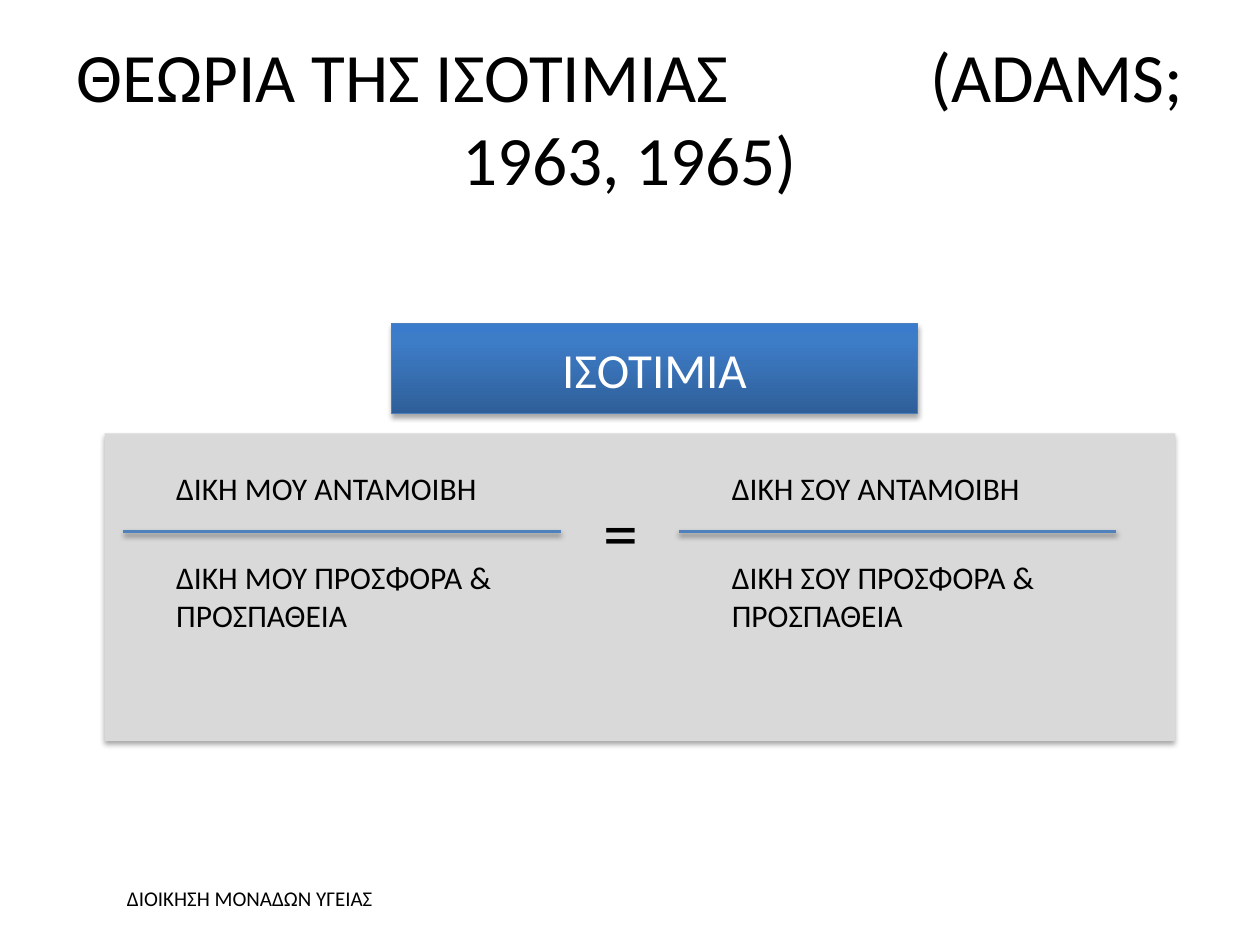
from copy import deepcopy

from pptx import Presentation
from pptx.dml.color import RGBColor
from pptx.enum.shapes import MSO_CONNECTOR, MSO_SHAPE
from pptx.enum.text import MSO_ANCHOR, PP_ALIGN
from pptx.oxml import parse_xml
from pptx.oxml.ns import nsdecls, qn
from pptx.util import Inches, Pt

LEFT, CENTER = PP_ALIGN.LEFT, PP_ALIGN.CENTER
TOP, MIDDLE = MSO_ANCHOR.TOP, MSO_ANCHOR.MIDDLE
RECTANGLE, STRAIGHT = MSO_SHAPE.RECTANGLE, MSO_CONNECTOR.STRAIGHT

# Content
TITLE = ["ΘΕΩΡΙΑ ΤΗΣ ΙΣΟΤΙΜΙΑΣ", " ", "(ADAMS; 1963, 1965)"]
BANNER = "ΙΣΟΤΙΜΙΑ"
FRACTIONS = [
    ("ΔΙΚΗ ΜΟΥ ΑΝΤΑΜΟΙΒΗ", "ΔΙΚΗ ΜΟΥ ΠΡΟΣΦΟΡΑ & ΠΡΟΣΠΑΘΕΙΑ"),
    ("ΔΙΚΗ ΣΟΥ ΑΝΤΑΜΟΙΒΗ", "ΔΙΚΗ ΣΟΥ ΠΡΟΣΦΟΡΑ & ΠΡΟΣΠΑΘΕΙΑ"),
]
FOOTER = "ΔΙΟΙΚΗΣΗ ΜΟΝΑΔΩΝ ΥΓΕΙΑΣ"

# Style
FONT, BLACK, WHITE = "Calibri", "000000", "FFFFFF"
PANEL_GREY, BAR_BLUE, BANNER_EDGE = "D9D9D9", "4F81BD", "4B7EBC"
BANNER_STOPS = [(0, "2F5F99"), (0.8, "3D7CC7"), (1, "3A7CCB")]
TITLE_GAP = 106  # points added to the space before the citation

# Fraction grid, in inches
FRACTION_LEFT, FRACTION_STEP, BAR_WIDTH = 0.98, 4.41, 3.47
BAR_Y, TERM_INDENT = 4.22, 0.32

prs = Presentation()
prs.slide_width, prs.slide_height = Inches(10), Inches(7.5)
slide = prs.slides.add_slide(prs.slide_layouts[6])


def rgb(color):
    return RGBColor.from_string(color)


def box(*lengths):
    return [Inches(length) for length in lengths]


def write(shape, pieces, size, color=BLACK, align=LEFT, anchor=TOP):
    frame = shape.text_frame
    frame.word_wrap, frame.vertical_anchor = True, anchor
    paragraph = frame.paragraphs[0]
    paragraph.alignment = align
    for piece in pieces:
        run = paragraph.add_run()
        run.text = piece
        run.font.name, run.font.size = FONT, Pt(size)
        run.font.color.rgb = rgb(color)
    return paragraph


def add_text(place, pieces, size, **layout):
    return write(slide.shapes.add_textbox(*box(*place)), pieces, size, **layout)


def add_shadow(shape, opacity, distance):
    properties = shape._element.spPr
    for old in properties.findall(qn("a:effectLst")):
        properties.remove(old)
    properties.append(parse_xml(
        f'<a:effectLst {nsdecls("a")}><a:outerShdw blurRad="{Pt(3.1)}" '
        f'dist="{Pt(distance)}" dir="5400000" rotWithShape="0">'
        f'<a:srgbClr val="{BLACK}"><a:alpha val="{opacity * 1000}"/></a:srgbClr>'
        '</a:outerShdw></a:effectLst>'))


# Grey panel
panel = slide.shapes.add_shape(RECTANGLE, *box(0.83, 3.44, 8.5, 2.44))
panel.fill.solid()
panel.fill.fore_color.rgb = rgb(PANEL_GREY)
panel.line.fill.background()
add_shadow(panel, 35, 1.8)

# Footer and title, with the single space in the title widened
add_text((0.91, 6.98, 7.8, 0.3), [FOOTER], 12)
title = add_text((0.5, 0.3, 9, 1.25), TITLE, 39.6, align=CENTER, anchor=MIDDLE)
title.runs[1].font._element.set("spc", str(TITLE_GAP * 100))

# Banner with a three-stop gradient
banner = slide.shapes.add_shape(RECTANGLE, *box(3.11, 2.57, 4.17, 0.71))
banner.fill.gradient()
banner.fill.gradient_angle = 90
stop_list = banner._element.spPr.find(qn("a:gradFill")).find(qn("a:gsLst"))
stop_list.append(deepcopy(stop_list[-1]))
for stop, (position, color) in zip(banner.fill.gradient_stops, BANNER_STOPS):
    stop.position, stop.color.rgb = position, rgb(color)
banner.line.color.rgb, banner.line.width = rgb(BANNER_EDGE), Pt(0.75)
add_shadow(banner, 35, 1.8)
write(banner, [BANNER], 28, color=WHITE, align=CENTER, anchor=MIDDLE)

# Two fractions and the equals sign between them
for column, (reward, effort) in enumerate(FRACTIONS):
    left = FRACTION_LEFT + column * FRACTION_STEP
    add_text((left + TERM_INDENT, BAR_Y - 0.55, 2.68, 0.4), [reward], 18)
    add_text((left + TERM_INDENT, BAR_Y + 0.16, 3.31, 0.71), [effort], 18)
    bar = slide.shapes.add_connector(
        STRAIGHT, *box(left, BAR_Y, left + BAR_WIDTH, BAR_Y))
    bar.line.color.rgb, bar.line.width = rgb(BAR_BLUE), Pt(2)
    add_shadow(bar, 38, 1.6)
add_text((4.69, 3.83, 1.18, 0.77), ["="], 40)

prs.save("out.pptx")
